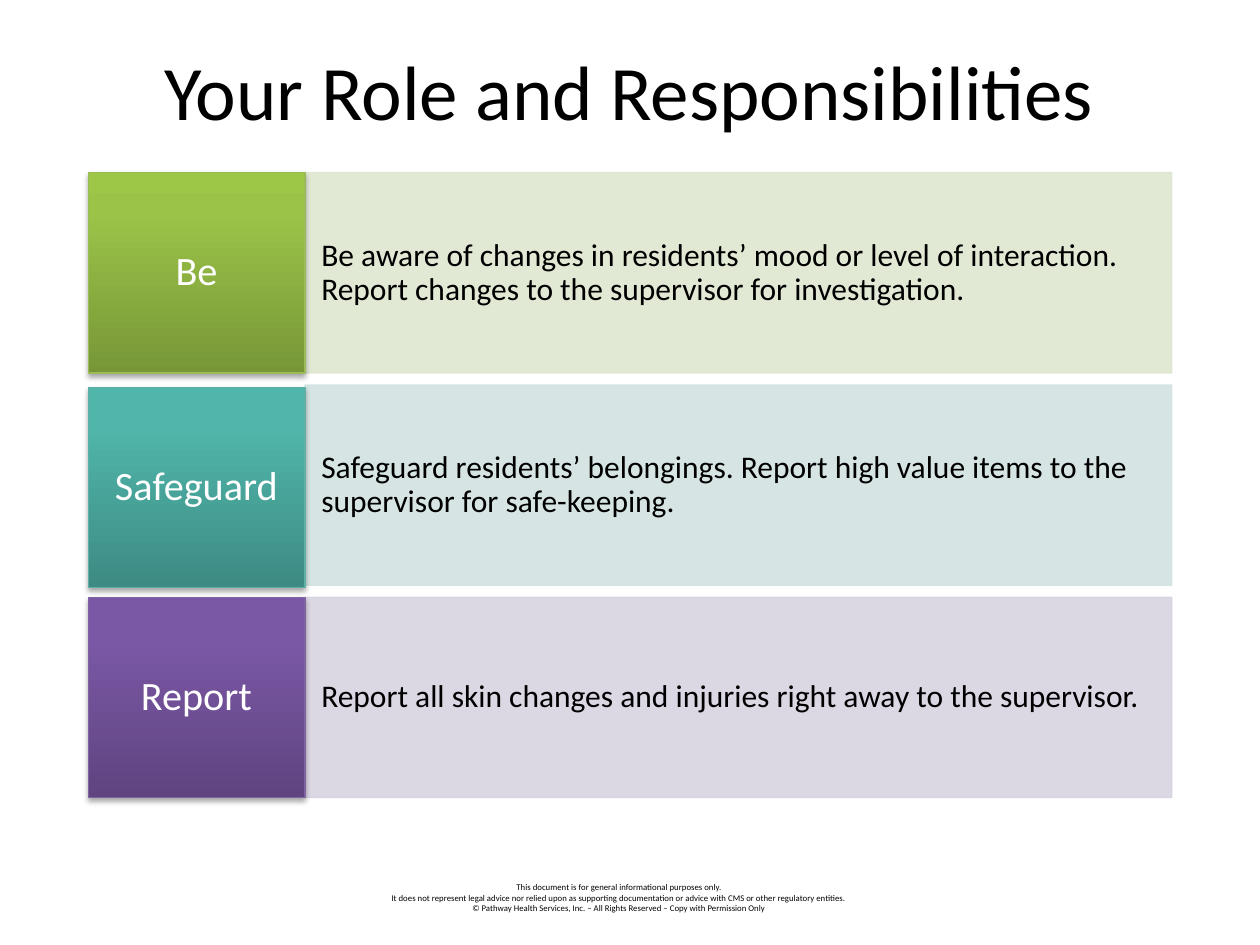
from dataclasses import dataclass

from lxml import etree
from pptx import Presentation
from pptx.dml.color import RGBColor
from pptx.enum.shapes import MSO_SHAPE
from pptx.enum.text import MSO_ANCHOR, MSO_AUTO_SIZE, PP_ALIGN
from pptx.oxml.ns import qn
from pptx.util import Inches, Pt

RECTANGLE = MSO_SHAPE.RECTANGLE
MIDDLE = MSO_ANCHOR.MIDDLE
LEFT, CENTER = PP_ALIGN.LEFT, PP_ALIGN.CENTER
GRADIENT_POSITIONS = (0, 80, 100)


@dataclass(frozen=True)
class Theme:
    font: str = "Calibri"
    dark: str = "000000"
    light: str = "FFFFFF"
    title_size: float = 44
    label_size: float = 23
    body_size: float = 18
    footer_size: float = 5


@dataclass(frozen=True)
class Duty:
    label: str
    text: str
    panel: str
    outline: str
    gradient: tuple
    tile_drop: float = 0


THEME = Theme()
LABEL_LEFT, LABEL_WIDTH = 0.7, 1.72
PANEL_WIDTH = 6.88
ROW_TOP, ROW_HEIGHT, ROW_PITCH = 1.37, 1.59, 1.685 + 0

DUTIES = (
    Duty("Be",
         "Be aware of changes in residents’ mood or level of interaction. "
         "Report changes to the supervisor for investigation.",
         "DEE7D1", "9BBB59", ("779737", "9BC348", "9DC746")),
    Duty("Safeguard",
         "Safeguard residents’ belongings. Report high value items to the "
         "supervisor for safe-keeping.",
         "D2E3E2", "5EAFA6", ("3D8B83", "50B5AA", "4EB8AC"), tile_drop=0.02),
    Duty("Report",
         "Report all skin changes and injuries right away to the supervisor.",
         "D8D3E0", "8064A2", ("5F4480", "7B58A6", "7C57A8")),
)

FOOTER_LINES = (
    "This document is for general informational purposes only.",
    "It does not represent legal advice nor relied upon as supporting "
    "documentation or advice with CMS or other regulatory entities.",
    "© Pathway Health Services, Inc. – All Rights Reserved – Copy with Permission Only",
)


def place(shape, left, top, width, height):
    shape.left, shape.top = Inches(left), Inches(top)
    shape.width, shape.height = Inches(width), Inches(height)


def format_text(text_frame, size, color, alignment):
    for paragraph in text_frame.paragraphs:
        paragraph.alignment = alignment
        for run in paragraph.runs:
            run.font.name = THEME.font
            run.font.size = Pt(size)
            run.font.color.rgb = RGBColor.from_string(color)


def add_color(parent, color, alpha=100):
    element = etree.SubElement(parent, qn("a:srgbClr"), val=color)
    if alpha < 100:
        etree.SubElement(element, qn("a:alpha"), val=str(alpha * 1000))


def set_translucent(fill, color, alpha):
    fill.solid()
    fill.fore_color.rgb = RGBColor.from_string(color)
    color_element = fill._xPr.find(qn("a:solidFill"))[0]
    etree.SubElement(color_element, qn("a:alpha"), val=str(alpha * 1000))


def set_gradient(shape, colors):
    """Fill from the bottom edge up, with one stop per color."""
    shape.fill.gradient()
    shape.fill.gradient_angle = 90
    stops = shape._element.spPr.find(qn("a:gradFill")).find(qn("a:gsLst"))
    for stop in list(stops):
        stops.remove(stop)
    for position, color in zip(GRADIENT_POSITIONS, colors):
        stop = etree.SubElement(stops, qn("a:gs"), pos=str(position * 1000))
        add_color(stop, color)


def add_drop_shadow(shape):
    effects = shape._element.spPr.find(qn("a:effectLst"))
    shadow = etree.SubElement(
        effects, qn("a:outerShdw"), blurRad=str(Pt(3.1)), dist=str(Pt(1.8)),
        dir="5400000", rotWithShape="0")
    add_color(shadow, THEME.dark, 35)


def add_box(slide, bounds, text, size, color, alignment, insets):
    """Add a rectangle with vertically centred text and (x, y) insets."""
    box = slide.shapes.add_shape(RECTANGLE, *map(Inches, bounds))
    box.shadow.inherit = False
    box.line.width = Pt(0.75)
    frame = box.text_frame
    frame.word_wrap = True
    frame.vertical_anchor = MIDDLE
    frame.margin_left = frame.margin_right = Inches(insets[0])
    frame.margin_top = frame.margin_bottom = Inches(insets[1])
    frame.text = text
    frame.paragraphs[0].line_spacing = 0.9
    format_text(frame, size, color, alignment)
    return box


def add_duty(slide, duty, top):
    panel = add_box(
        slide, (LABEL_LEFT + LABEL_WIDTH, top, PANEL_WIDTH, ROW_HEIGHT),
        duty.text, THEME.body_size, THEME.dark, LEFT, (0.13, 0.4))
    set_translucent(panel.fill, duty.panel, 90)
    set_translucent(panel.line.fill, duty.panel, 90)

    tile = add_box(
        slide, (LABEL_LEFT, top + duty.tile_drop, LABEL_WIDTH, ROW_HEIGHT),
        duty.label, THEME.label_size, THEME.light, CENTER, (0.09, 0.16))
    set_gradient(tile, duty.gradient)
    tile.line.color.rgb = RGBColor.from_string(duty.outline)
    add_drop_shadow(tile)


def set_title(slide, text):
    title = slide.shapes.title
    place(title, 0.85, 0.05, 8.29, 1.32)
    title.text_frame.text = text
    title.text_frame.vertical_anchor = MIDDLE
    format_text(title.text_frame, THEME.title_size, THEME.dark, CENTER)


def add_footer(slide):
    footer = slide.shapes.add_textbox(*map(Inches, (2.75, 6.95, 4.33, 0.35)))
    frame = footer.text_frame
    frame.word_wrap = True
    frame.auto_size = MSO_AUTO_SIZE.SHAPE_TO_FIT_TEXT
    frame.text = "\n".join(FOOTER_LINES)
    format_text(frame, THEME.footer_size, THEME.dark, CENTER)


def main():
    presentation = Presentation()
    presentation.slide_width = Inches(10)
    presentation.slide_height = Inches(7.5)
    slide = presentation.slides.add_slide(presentation.slide_layouts[5])
    add_footer(slide)
    set_title(slide, "Your Role and Responsibilities")
    for row, duty in enumerate(DUTIES):
        add_duty(slide, duty, ROW_TOP + row * ROW_PITCH)
    presentation.save("out.pptx")


if __name__ == "__main__":
    main()
